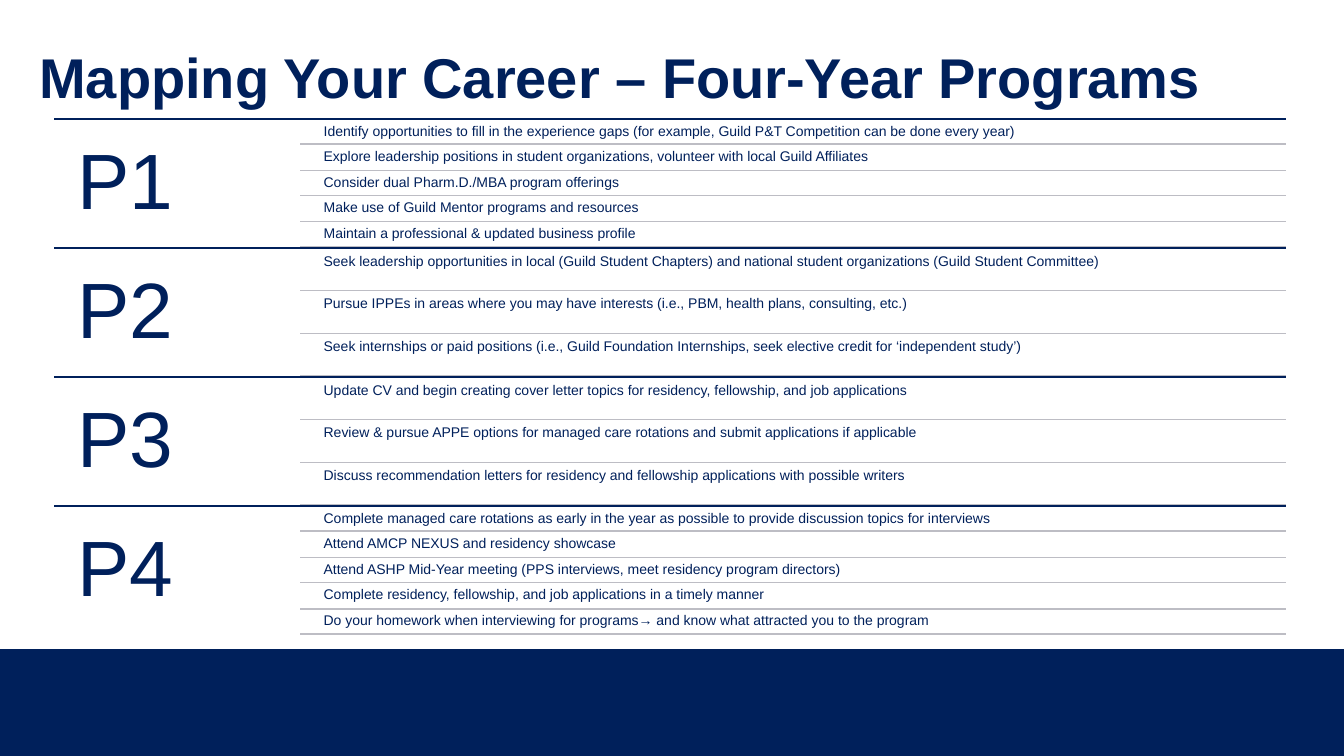
from lxml.etree import SubElement
from pptx import Presentation
from pptx.dml.color import RGBColor
from pptx.enum.shapes import MSO_CONNECTOR, MSO_SHAPE
from pptx.enum.text import MSO_ANCHOR, MSO_AUTO_SIZE, PP_ALIGN
from pptx.oxml.ns import qn
from pptx.util import Pt

PX = 9144
NAVY = "00205B"
GREY = "BDBDC4"
LEFT, SPLIT, RIGHT = 54, 298, 1275
TOP, YEAR_H = 118, 128

YEARS = {
    "P1": [
        "Identify opportunities to fill in the experience gaps (for example, Guild P&T Competition can be done every year)",
        "Explore leadership positions in student organizations, volunteer with local Guild Affiliates",
        "Consider dual Pharm.D./MBA program offerings",
        "Make use of Guild Mentor programs and resources",
        "Maintain a professional & updated business profile",
    ],
    "P2": [
        "Seek leadership opportunities in local (Guild Student Chapters) and national student organizations (Guild Student Committee)",
        "Pursue IPPEs in areas where you may have interests (i.e., PBM, health plans, consulting, etc.)",
        "Seek internships or paid positions (i.e., Guild Foundation Internships, seek elective credit for ‘independent study’)",
    ],
    "P3": [
        "Update CV and begin creating cover letter topics for residency, fellowship, and job applications",
        "Review & pursue APPE options for managed care rotations and submit applications if applicable",
        "Discuss recommendation letters for residency and fellowship applications with possible writers",
    ],
    "P4": [
        "Complete managed care rotations as early in the year as possible to provide discussion topics for interviews",
        "Attend AMCP NEXUS and residency showcase",
        "Attend ASHP Mid-Year meeting (PPS interviews, meet residency program directors)",
        "Complete residency, fellowship, and job applications in a timely manner",
        "Do your homework when interviewing for programs→ and know what attracted you to the program",
    ],
}

prs = Presentation()
prs.slide_width, prs.slide_height = 1333 * PX, 750 * PX
s = prs.slides.add_slide(prs.slide_layouts[5])


def write(sp, text, box, size, inset=0, bold=False, anchor=MSO_ANCHOR.TOP):
    sp.left, sp.top, sp.width, sp.height = [v * PX for v in box]
    tf = sp.text_frame
    tf.word_wrap = True
    tf.auto_size = MSO_AUTO_SIZE.NONE
    tf.vertical_anchor = anchor
    tf.margin_left = tf.margin_right = tf.margin_top = tf.margin_bottom = inset * PX
    p = tf.paragraphs[0]
    p.alignment = PP_ALIGN.LEFT
    p.line_spacing = 0.9
    r = p.add_run()
    r.text = text
    r.font.name = "Arial"
    r.font.size = Pt(size)
    r.font.bold = bold
    r.font.color.rgb = RGBColor.from_string(NAVY)


def rule(x, y, color):
    c = s.shapes.add_connector(MSO_CONNECTOR.STRAIGHT, x * PX, y * PX, RIGHT * PX, y * PX)
    c.line.color.rgb = RGBColor.from_string(color)
    c.line.width = Pt(1)
    SubElement(c._element.spPr, qn("a:effectLst"))


band = s.shapes.add_shape(MSO_SHAPE.RECTANGLE, 0, 644 * PX, 1333 * PX, 106 * PX)
band.shadow.inherit = False
band.fill.solid()
band.fill.fore_color.rgb = RGBColor.from_string(NAVY)
band.line.fill.background()

write(s.shapes.title, "Mapping Your Career – Four-Year Programs", (39, 7, 1259, 145), 40,
      bold=True, anchor=MSO_ANCHOR.MIDDLE)

for i, (year, steps) in enumerate(YEARS.items()):
    y = TOP + i * YEAR_H
    rule(LEFT, y, NAVY)
    write(s.shapes.add_textbox(0, 0, 0, 0), year, (LEFT, y, SPLIT - LEFT, YEAR_H), 56, inset=23)
    pitch = (YEAR_H - 1) / len(steps)
    gap = round(pitch / 21)
    for j, step in enumerate(steps):
        row, end = y + round(j * pitch), y + round((j + 1) * pitch)
        write(s.shapes.add_textbox(0, 0, 0, 0), step, (317, row + gap, 959, end - row - gap), 10, inset=4)
        rule(SPLIT, end, GREY)

prs.save("out.pptx")
